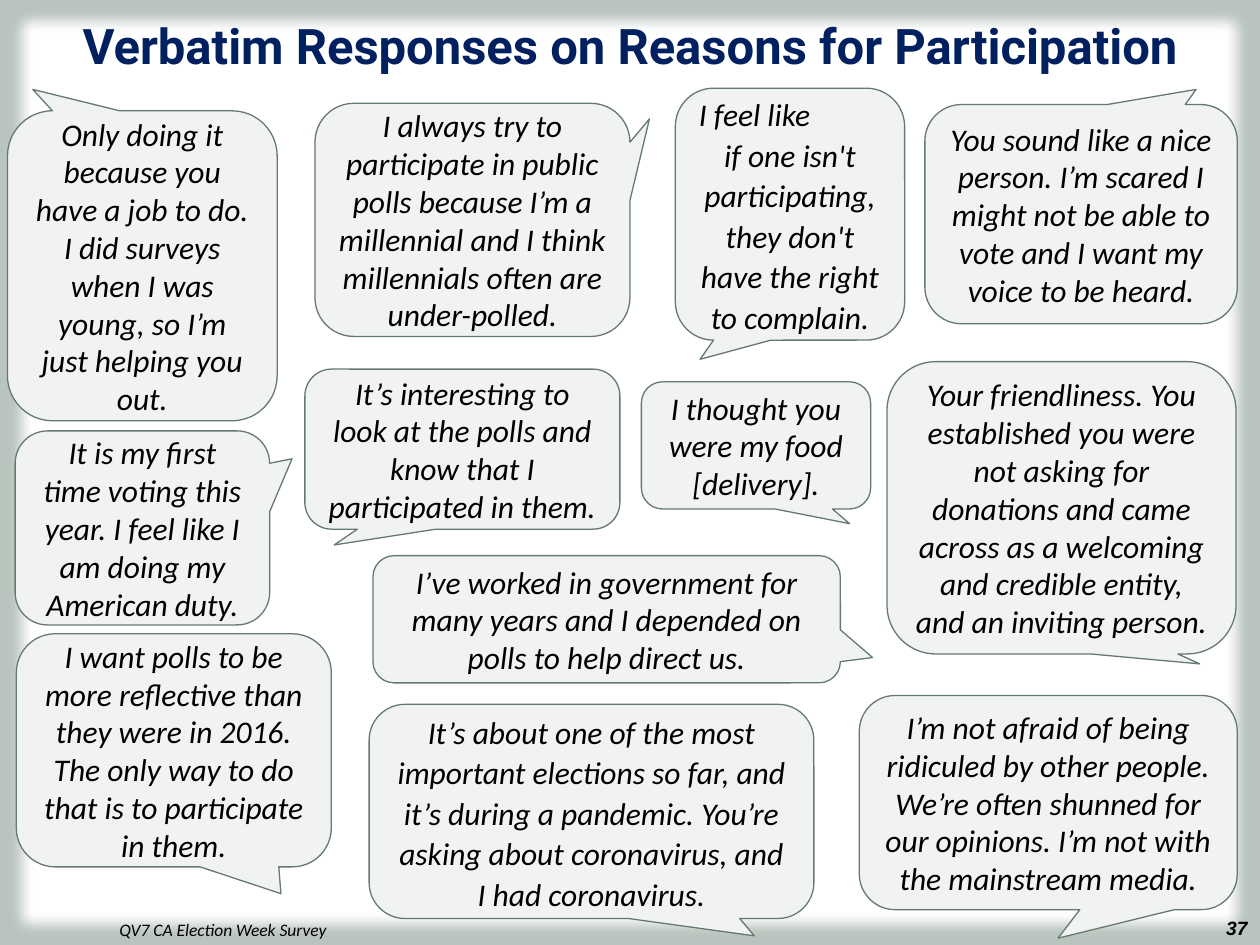
from lxml import etree
from pptx import Presentation
from pptx.dml.color import RGBColor
from pptx.enum.shapes import MSO_SHAPE
from pptx.enum.text import MSO_ANCHOR, PP_ALIGN
from pptx.oxml.ns import qn
from pptx.util import Inches, Pt

RECTANGLE = MSO_SHAPE.RECTANGLE
CALLOUT = MSO_SHAPE.ROUNDED_RECTANGULAR_CALLOUT
LEFT, CENTER, RIGHT = PP_ALIGN.LEFT, PP_ALIGN.CENTER, PP_ALIGN.RIGHT
TOP, MIDDLE, BOTTOM = MSO_ANCHOR.TOP, MSO_ANCHOR.MIDDLE, MSO_ANCHOR.BOTTOM

CORNER = 0.167
LOOSE = {"line_spacing": 1.07}

# Each quote: box (left, top, width, height), pointer tip, paragraphs, format
QUOTES = [
    ((5.09, 3.03, 1.82, 1.01), (0.408, 0.615),
     [("I thought you were my food [delivery].", CENTER)], {}),
    ((0.13, 5.03, 2.5, 1.85), (0.34, 0.615),
     [("I want polls to be more reflective than they were in 2016. "
       "The only way to do that is to participate in them.", CENTER)], {}),
    ((5.36, 0.7, 1.82, 2), (-0.392, 0.576),
     [("I feel like", LEFT),
      ("if one isn't participating, they don't have the right to complain.",
       CENTER)], LOOSE),
    ((2.5, 0.82, 2.5, 1.85), (0.562, -0.433),
     [("I always try to participate in public polls because I’m a millennial "
       "and I think millennials often are under-polled.", CENTER)], {}),
    ((0.06, 0.88, 2.14, 2.46), (-0.406, -0.569),
     [("Only doing it because you have a job to do. I did surveys when I was "
       "young, so I’m just helping you out.", CENTER)], {}),
    ((0.12, 3.42, 2.02, 1.54), (0.588, -0.356),
     [("It is my first time voting this year. I feel like I am doing my "
       "American duty.", CENTER)], {}),
    ((2.96, 4.41, 3.71, 1.01), (0.569, 0.301),
     [("I’ve worked in government for many years and I depended on polls to "
       "help direct us.", CENTER)], {}),
    ((7.04, 2.87, 2.77, 2.32), (0.396, 0.534),
     [("Your friendliness. You established you were not asking for donations "
       "and came across as a welcoming and credible entity, "
       "and an inviting person.", CENTER)], {}),
    ((7.34, 0.83, 2.48, 1.74), (0.368, -0.569),
     [("You sound like a nice person. I’m scared I might not be able to vote "
       "and I want my voice to be heard.", CENTER)], {}),
    ((6.82, 5.52, 3, 1.7), (0.026, 0.633),
     [("I’m not afraid of being ridiculed by other people. We’re often "
       "shunned for our opinions. I’m not with the mainstream media.",
       CENTER)], {}),
    ((2.42, 2.93, 2.5, 1.27), (-0.407, 0.599),
     [("It’s interesting to look at the polls and know that I participated "
       "in them.", CENTER)], {}),
    ((2.93, 5.59, 3.53, 1.7), (0.366, 0.581),
     [("It’s about one of the most important elections so far, and it’s "
       "during a pandemic. You’re asking about coronavirus, and I had "
       "coronavirus.", CENTER)], LOOSE),
]


def color(value):
    return RGBColor.from_string(value)


class SlideBuilder:
    QUOTE_FONT = {"name": "Calibri", "size": Pt(18), "italic": True}

    def __init__(self, slide):
        self.slide = slide

    def background(self, fill):
        self.slide.background.fill.solid()
        self.slide.background.fill.fore_color.rgb = color(fill)

    def shape(self, kind, box, fill, line, width):
        shape = self.slide.shapes.add_shape(kind, *map(Inches, box))
        shape.shadow.inherit = False
        shape.fill.solid()
        shape.fill.fore_color.rgb = color(fill)
        shape.line.color.rgb = color(line)
        shape.line.width = Pt(width)
        return shape

    def soft_panel(self, box, radius):
        shape = self.shape(RECTANGLE, box, "FFFFFF", "4C5B53", 1.5)
        effects = shape._element.spPr.find(qn("a:effectLst"))
        etree.SubElement(effects, qn("a:softEdge"), rad=str(Inches(radius)))

    def set_text(self, shape, paragraphs, anchor, font, layout, ink="000000"):
        frame = shape.text_frame
        frame.word_wrap = True
        frame.vertical_anchor = anchor
        for index, (text, alignment) in enumerate(paragraphs):
            paragraph = frame.add_paragraph() if index else frame.paragraphs[0]
            paragraph.alignment = alignment
            for name, value in layout.items():
                setattr(paragraph, name, value)
            run = paragraph.add_run()
            run.text = text
            for name, value in font.items():
                setattr(run.font, name, value)
            run.font.color.rgb = color(ink)

    def label(self, box, text, alignment, anchor, font, ink="000000", **layout):
        shape = self.slide.shapes.add_textbox(*map(Inches, box))
        self.set_text(shape, [(text, alignment)], anchor, font, layout, ink)

    def quote(self, box, tip, paragraphs, layout):
        shape = self.shape(CALLOUT, box, "F1F3F2", "65796E", 0.75)
        for index, value in enumerate((*tip, CORNER)):
            shape.adjustments[index] = value
        self.set_text(shape, paragraphs, MIDDLE, self.QUOTE_FONT, layout)
        # Space after the closing paragraph of a loosely set quote
        if layout:
            shape.text_frame.paragraphs[-1].space_after = Pt(8)


def main():
    presentation = Presentation()
    presentation.slide_width = Inches(10)
    presentation.slide_height = Inches(7.5)
    builder = SlideBuilder(
        presentation.slides.add_slide(presentation.slide_layouts[6]))

    # Backdrop and page number
    builder.background("B9C4BE")
    builder.soft_panel((0.04, 0.03, 9.92, 7.45), 0.12)
    builder.label((8.73, 7.22, 1.27, 0.28), "37", RIGHT, TOP,
                  {"name": "Arial", "size": Pt(11), "bold": True,
                   "italic": True})

    # Title
    builder.label((0, 0.07, 10, 1.25),
                  "Verbatim Responses on Reasons for Participation",
                  CENTER, TOP,
                  {"name": "Roboto", "size": Pt(28), "bold": True}, "002060")

    # Quotes
    for quote in QUOTES:
        builder.quote(*quote)

    # Source line
    builder.label((0.85, 6.91, 8.74, 0.6), "QV7 CA Election Week Survey",
                  LEFT, BOTTOM,
                  {"name": "Calibri", "size": Pt(10), "italic": True},
                  line_spacing=0.9)

    presentation.save("out.pptx")


if __name__ == "__main__":
    main()
